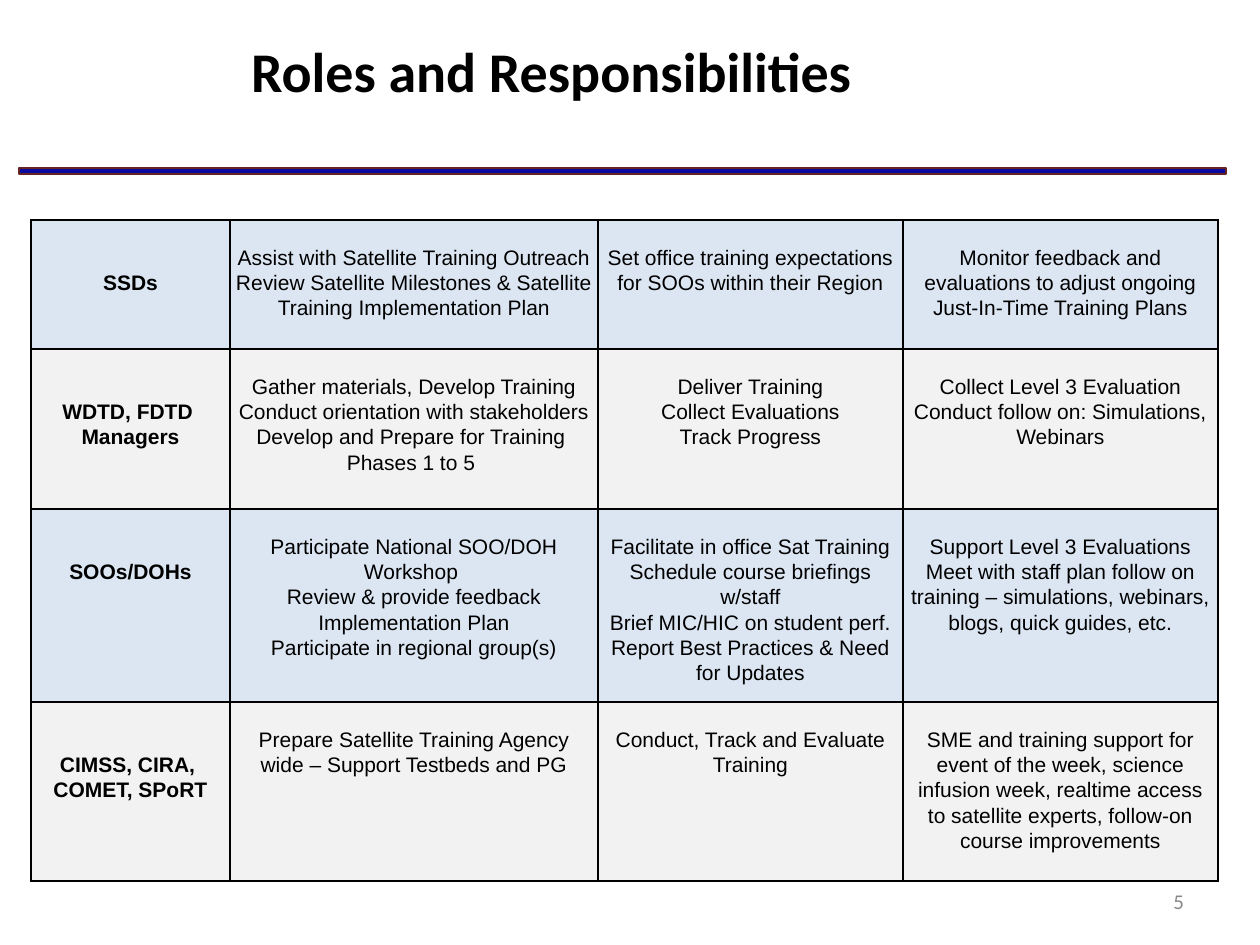
from dataclasses import dataclass

from lxml import etree
from pptx import Presentation
from pptx.dml.color import RGBColor
from pptx.enum.shapes import MSO_SHAPE
from pptx.enum.text import MSO_ANCHOR, MSO_AUTO_SIZE, PP_ALIGN
from pptx.oxml.ns import qn
from pptx.util import Emu, Pt

RECTANGLE = MSO_SHAPE.RECTANGLE
TOP, MIDDLE = MSO_ANCHOR.TOP, MSO_ANCHOR.MIDDLE
LEFT, CENTER, RIGHT = PP_ALIGN.LEFT, PP_ALIGN.CENTER, PP_ALIGN.RIGHT
TITLE_ONLY = 5
PIXELS_PER_INCH = 126


@dataclass(frozen=True)
class Theme:
    black: str = "000000"
    gray: str = "888888"
    rule: str = "0A0A9E"
    rule_edge: str = "632423"
    row_fills: tuple[str, str] = ("DCE6F2", "F2F2F2")
    heading_font: str = "Calibri"
    body_font: str = "Arial"
    title_size: int = 32
    body_size: int = 12
    line_spacing: float = 1.07


@dataclass(frozen=True)
class Role:
    height: int
    name: str
    duties: tuple[str, str, str]


THEME = Theme()
COLUMN_WIDTHS = (199, 368, 305, 315)
CELL_INSET = 6
LINE_HEIGHT = 25

ROLES = (
    Role(129, "SSDs", (
        "Assist with Satellite Training Outreach\n"
        "Review Satellite Milestones & Satellite Training Implementation Plan",
        "Set office training expectations for SOOs within their Region",
        "Monitor feedback and evaluations to adjust ongoing Just-In-Time Training Plans",
    )),
    Role(160, "WDTD, FDTD \nManagers", (
        "Gather materials, Develop Training\nConduct orientation with stakeholders\n"
        "Develop and Prepare for Training \nPhases 1 to 5 ",
        "Deliver Training\nCollect Evaluations\nTrack Progress",
        "Collect Level 3 Evaluation\nConduct follow on: Simulations, Webinars",
    )),
    Role(193, "SOOs/DOHs", (
        "Participate National SOO/DOH Workshop \n"
        "Review & provide feedback Implementation Plan\nParticipate in regional group(s)",
        "Facilitate in office Sat Training\nSchedule course briefings w/staff\n"
        "Brief MIC/HIC on student perf.\nReport Best Practices & Need for Updates",
        "Support Level 3 Evaluations\nMeet with staff plan follow on training – "
        "simulations, webinars, blogs, quick guides, etc.",
    )),
    Role(179, "CIMSS, CIRA, \nCOMET, SPoRT", (
        "Prepare Satellite Training Agency wide – Support Testbeds and PG",
        "Conduct, Track and Evaluate Training",
        "SME and training support for event of the week, science infusion week, "
        "realtime access to satellite experts, follow-on course improvements",
    )),
)


def px(length: int) -> Emu:
    return Emu(round(length * 914400 / PIXELS_PER_INCH))


def write_text(text_frame, text: str, *, size: int, font: str, color: str = THEME.black,
               bold: bool = False, align=LEFT, line_spacing: float = 1.0) -> None:
    """Write one paragraph for each line of text."""
    text_frame.text = text
    for paragraph in text_frame.paragraphs:
        paragraph.alignment = align
        paragraph.line_spacing = line_spacing
        paragraph.space_before = Pt(0)
        for run in paragraph.runs:
            run.font.size = Pt(size)
            run.font.name = font
            run.font.bold = bold
            run.font.color.rgb = RGBColor.from_string(color)


def set_frame(text_frame, anchor, horizontal: int, vertical: int) -> None:
    text_frame.word_wrap = True
    text_frame.auto_size = MSO_AUTO_SIZE.NONE
    text_frame.vertical_anchor = anchor
    text_frame.margin_left = text_frame.margin_right = px(horizontal)
    text_frame.margin_top = text_frame.margin_bottom = px(vertical)


def add_borders(cell) -> None:
    properties = cell._tc.get_or_add_tcPr()
    for side in ("a:lnL", "a:lnR", "a:lnT", "a:lnB"):
        line = etree.SubElement(properties, qn(side), w=str(Pt(1)))
        fill = etree.SubElement(line, qn("a:solidFill"))
        etree.SubElement(fill, qn("a:srgbClr"), val=THEME.black)


def fill_cell(cell, text: str, fill: str, *, is_name: bool) -> None:
    add_borders(cell)
    cell.fill.solid()
    cell.fill.fore_color.rgb = RGBColor.from_string(fill)
    cell.vertical_anchor = TOP
    cell.margin_left = cell.margin_right = px(CELL_INSET)
    # Names start one line lower than duties
    cell.margin_top = px(LINE_HEIGHT * (2 if is_name else 1))
    cell.margin_bottom = 0
    write_text(cell.text_frame, text, size=THEME.body_size, font=THEME.body_font,
               bold=is_name, align=CENTER, line_spacing=THEME.line_spacing)


def add_roles_table(slide, left: int, top: int) -> None:
    table = slide.shapes.add_table(
        len(ROLES), len(COLUMN_WIDTHS), px(left), px(top),
        px(sum(COLUMN_WIDTHS)), px(sum(role.height for role in ROLES))).table
    table.first_row = table.horz_banding = False
    for column, width in zip(table.columns, COLUMN_WIDTHS):
        column.width = px(width)
    for row_index, role in enumerate(ROLES):
        table.rows[row_index].height = px(role.height)
        fill = THEME.row_fills[row_index % 2]
        for column_index, text in enumerate((role.name, *role.duties)):
            fill_cell(table.cell(row_index, column_index), text, fill,
                      is_name=column_index == 0)


def add_rule(slide) -> None:
    rule = slide.shapes.add_shape(RECTANGLE, px(19), px(168), px(1207), px(6))
    rule.shadow.inherit = False
    rule.fill.solid()
    rule.fill.fore_color.rgb = RGBColor.from_string(THEME.rule)
    rule.line.color.rgb = RGBColor.from_string(THEME.rule_edge)
    rule.line.width = Pt(0.75)


def main() -> None:
    presentation = Presentation()
    presentation.slide_width, presentation.slide_height = px(1260), px(945)
    slide = presentation.slides.add_slide(presentation.slide_layouts[TITLE_ONLY])

    # Heading and rule
    title = slide.shapes.title
    title.left, title.top, title.width, title.height = px(238), px(23), px(745), px(95)
    set_frame(title.text_frame, TOP, 13, 13)
    write_text(title.text_frame, "Roles and Responsibilities", size=THEME.title_size,
               font=THEME.heading_font, bold=True)
    add_rule(slide)

    # Page number
    number = slide.shapes.add_textbox(px(903), px(876), px(294), px(50))
    set_frame(number.text_frame, MIDDLE, 13, 6)
    write_text(number.text_frame, "5", size=THEME.body_size, font=THEME.heading_font,
               color=THEME.gray, align=RIGHT)

    # Duties of each role
    add_roles_table(slide, 31, 220)

    presentation.save("out.pptx")


if __name__ == "__main__":
    main()
